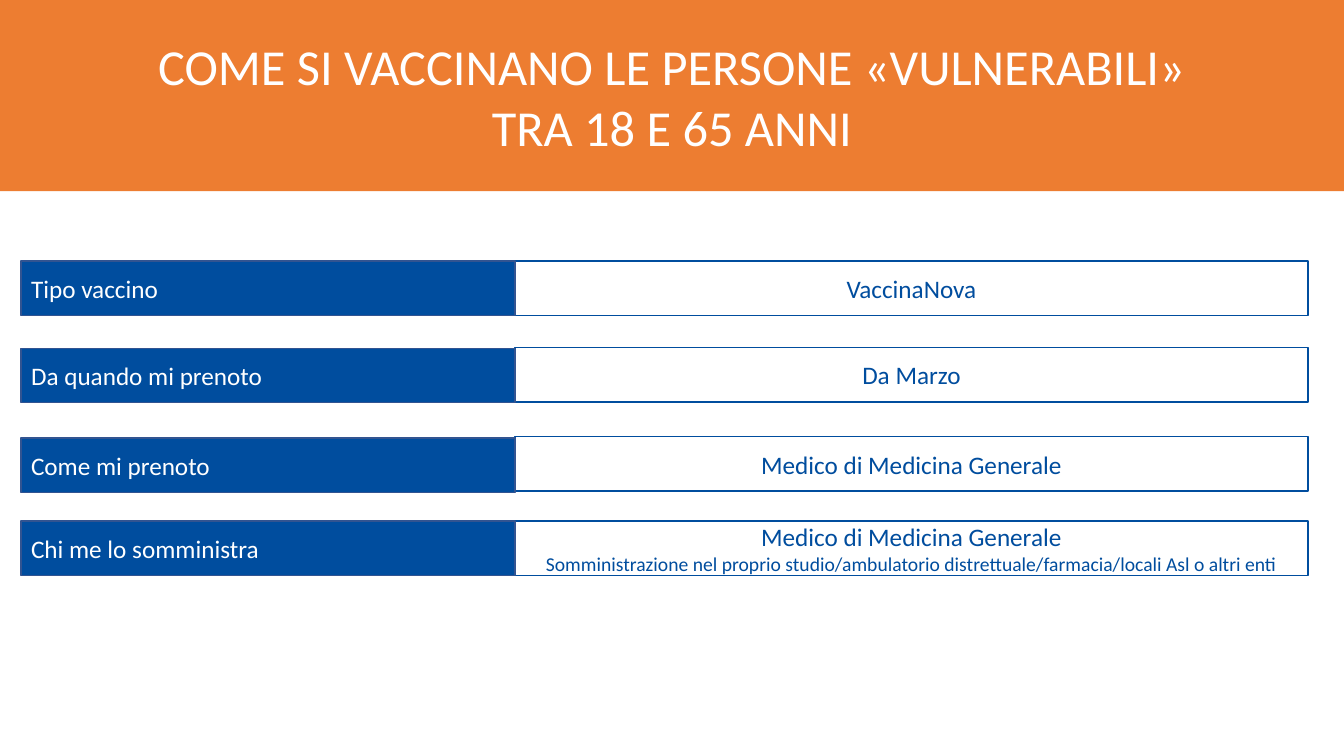
from pptx import Presentation
from pptx.dml.color import RGBColor
from pptx.enum.shapes import MSO_SHAPE
from pptx.enum.text import MSO_ANCHOR, MSO_AUTO_SIZE, PP_ALIGN
from pptx.util import Pt

ORANGE, BLUE, DARK_BLUE, WHITE = "ED7D31", "004D9E", "325491", "FFFFFF"
LABEL_LEFT, LABEL_WIDTH = 15.1, 352.8
VALUE_LEFT, VALUE_WIDTH = LABEL_LEFT + LABEL_WIDTH, 566.3
ROW_HEIGHT = 38.9

TITLE_LINES = [
    ("COME SI VACCINANO LE PERSONE «VULNERABILI»", 36),
    ("TRA 18 E 65 ANNI", 36),
]
ROWS = [
    (186.5, 186.5, "Tipo vaccino", [("VaccinaNova", 18)]),
    (248.8, 248.2, "Da quando mi prenoto", [("Da Marzo", 18)]),
    (313.0, 312.0, "Come mi prenoto", [("Medico di Medicina Generale", 18)]),
    (372.2, 372.2, "Chi me lo somministra", [
        ("Medico di Medicina Generale", 18),
        ("Somministrazione nel proprio studio/ambulatorio distrettuale"
         "/farmacia/locali Asl o altri enti", 14),
    ]),
]


def color(value):
    """Return the colour for a hex string."""
    return RGBColor.from_string(value)


def write_lines(shape, lines, text_color, alignment):
    """Write one paragraph per (text, size) pair, centred vertically."""
    frame = shape.text_frame
    frame.word_wrap = True
    frame.auto_size = MSO_AUTO_SIZE.NONE
    frame.vertical_anchor = MSO_ANCHOR.MIDDLE
    for index, (text, size) in enumerate(lines):
        paragraph = frame.add_paragraph() if index else frame.paragraphs[0]
        paragraph.alignment = alignment
        run = paragraph.add_run()
        run.text = text
        run.font.name = "Calibri"
        run.font.size = Pt(size)
        run.font.color.rgb = color(text_color)


def fill_shape(shape, fill):
    """Give a shape a solid fill."""
    shape.fill.solid()
    shape.fill.fore_color.rgb = color(fill)


def format_title(slide, width):
    """Turn the title placeholder into the banner across the top."""
    title = slide.shapes.title
    title.left, title.top = Pt(0), Pt(0)
    title.width, title.height = width, Pt(136.6)
    fill_shape(title, ORANGE)
    write_lines(title, TITLE_LINES, WHITE, PP_ALIGN.CENTER)


def add_box(slide, left, top, width, fill, outline):
    """Add a bordered rectangle of row height."""
    box = slide.shapes.add_shape(
        MSO_SHAPE.RECTANGLE, Pt(left), Pt(top), Pt(width), Pt(ROW_HEIGHT))
    box.shadow.inherit = False
    fill_shape(box, fill)
    box.line.color.rgb = color(outline)
    box.line.width = Pt(1)
    return box


def add_row(slide, label_top, value_top, label, value_lines):
    """Add a value box and its label box side by side."""
    value_box = add_box(slide, VALUE_LEFT, value_top, VALUE_WIDTH, WHITE, BLUE)
    write_lines(value_box, value_lines, BLUE, PP_ALIGN.CENTER)
    label_box = add_box(
        slide, LABEL_LEFT, label_top, LABEL_WIDTH, BLUE, DARK_BLUE)
    write_lines(label_box, [(label, 18)], WHITE, PP_ALIGN.LEFT)


def main():
    """Build and save the slide."""
    presentation = Presentation()
    presentation.slide_width, presentation.slide_height = Pt(960), Pt(540)
    slide = presentation.slides.add_slide(presentation.slide_layouts[5])
    format_title(slide, presentation.slide_width)
    for row in ROWS:
        add_row(slide, *row)
    presentation.save("out.pptx")


if __name__ == "__main__":
    main()
